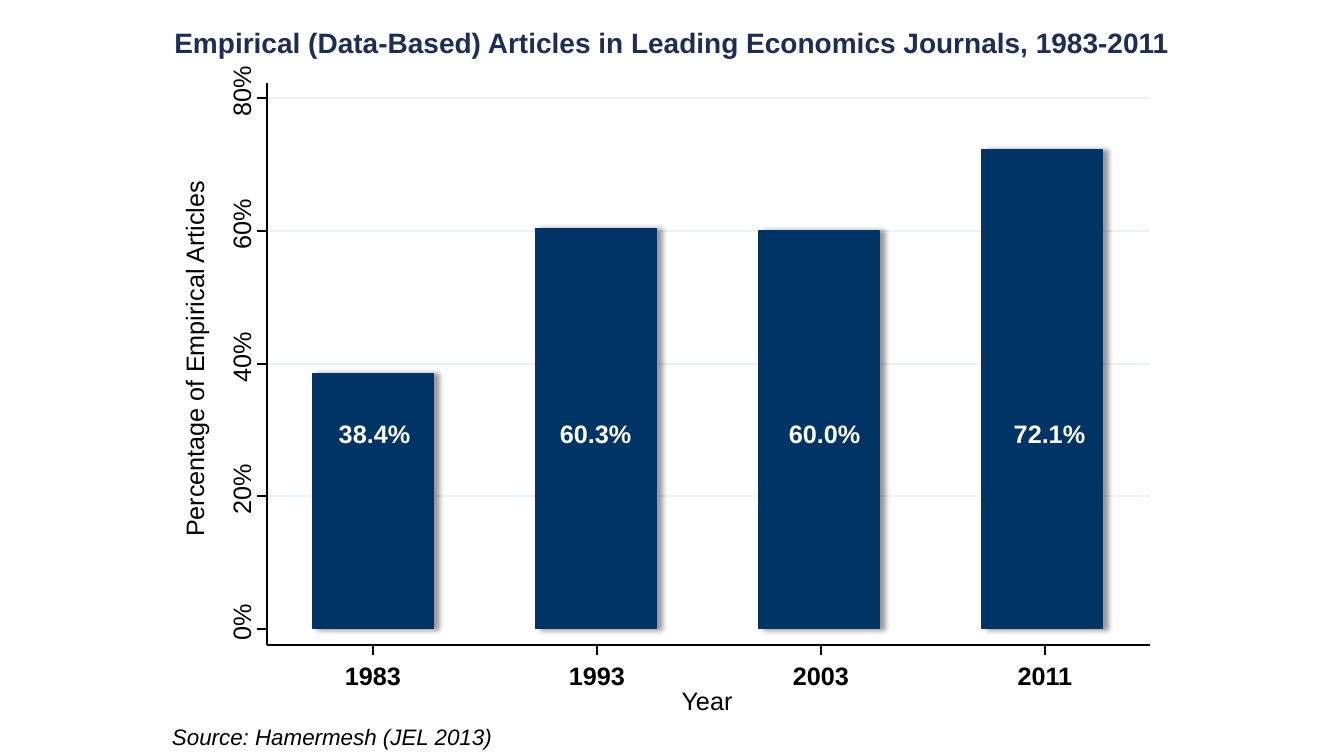
from lxml import etree
from pptx import Presentation
from pptx.dml.color import RGBColor
from pptx.enum.shapes import MSO_CONNECTOR, MSO_SHAPE
from pptx.enum.text import PP_ALIGN
from pptx.oxml import parse_xml
from pptx.oxml.ns import qn
from pptx.util import Emu, Pt

PX = 914400 / 100.8
RECTANGLE = MSO_SHAPE.RECTANGLE
STRAIGHT = MSO_CONNECTOR.STRAIGHT
LEFT, CENTER = PP_ALIGN.LEFT, PP_ALIGN.CENTER
color = RGBColor.from_string

AXIS_LEFT, AXIS_RIGHT, AXIS_TOP, AXIS_BOTTOM = 267, 1150, 83, 645
ZERO, TOP_TICK, TOP_PERCENT = 629, 98, 80
TICK = 10
BAR_WIDTH = 121
SHADOW = (
    '<a:outerShdw xmlns:a="http://schemas.openxmlformats.org/drawingml/2006/main" '
    'blurRad="50800" dist="38100" dir="0" algn="l" rotWithShape="0">'
    '<a:srgbClr val="000000"><a:alpha val="40000"/></a:srgbClr></a:outerShdw>'
)
articles = [
    ("1983", 38.4, 320),
    ("1993", 60.3, 541),
    ("2003", 60.0, 770),
    ("2011", 72.1, 995),
]

deck = Presentation()
deck.slide_width, deck.slide_height = Emu(round(1344 * PX)), Emu(round(756 * PX))
page = deck.slides.add_slide(deck.slide_layouts[6])


def add_text(text, *, at, size=18, fill="000000", bold=False, italic=False,
             align=CENTER, rotation=0, wrap=False):
    box = page.shapes.add_textbox(*[Emu(round(length * PX)) for length in at])
    box.rotation = rotation
    frame = box.text_frame
    frame.word_wrap = wrap
    frame.margin_left = frame.margin_right = frame.margin_top = frame.margin_bottom = 0
    para = frame.paragraphs[0]
    para.alignment = align
    span = para.add_run()
    span.text = text
    span.font.name = "Arial"
    span.font.size = Pt(size)
    span.font.bold = bold
    span.font.italic = italic
    span.font.color.rgb = color(fill)


def add_line(*ends, stroke="000000", width=0.88):
    line = page.shapes.add_connector(STRAIGHT, *[Emu(round(end * PX)) for end in ends])
    line.line.color.rgb = color(stroke)
    line.line.width = Pt(width)
    etree.SubElement(line._element.spPr, qn("a:effectLst"))


percent_ticks = [
    (percent, round(ZERO - percent * (ZERO - TOP_TICK) / TOP_PERCENT))
    for percent in range(0, TOP_PERCENT + 1, 20)
]
for percent, y in percent_ticks[1:]:
    add_line(AXIS_LEFT, y, AXIS_RIGHT, y, stroke="EAF2F3", width=1.75)

for index, (year, percent, label_left) in enumerate(articles):
    height = round(percent * (ZERO - TOP_TICK) / TOP_PERCENT)
    bounds = (313 + 223 * index, ZERO - height, BAR_WIDTH, height)
    bar = page.shapes.add_shape(RECTANGLE, *[Emu(round(length * PX)) for length in bounds])
    bar.fill.solid()
    bar.fill.fore_color.rgb = color("003366")
    bar.line.color.rgb = color("003366")
    bar.line.width = Pt(0)
    bar.shadow.inherit = False
    bar._element.spPr.find(qn("a:effectLst")).append(parse_xml(SHADOW))
    add_text(f"{percent:.1f}%", at=(label_left, 418, 109, 30), fill="FFFFFF", bold=True)
    tick_x = 373 + 224 * index
    add_line(tick_x, AXIS_BOTTOM, tick_x, AXIS_BOTTOM + TICK)
    add_text(year, at=(tick_x - 40, 660, 80, 30), bold=True)

add_line(AXIS_LEFT, AXIS_BOTTOM, AXIS_LEFT, AXIS_TOP)
add_line(AXIS_LEFT, AXIS_BOTTOM, AXIS_RIGHT, AXIS_BOTTOM)
for percent, y in percent_ticks:
    add_line(AXIS_LEFT, y, AXIS_LEFT - TICK, y)
    add_text(f"{percent}%", at=(206, y - 22, 70, 30), rotation=270)

add_text("Year", at=(667, 685, 80, 30))
add_text("Percentage of Empirical Articles", at=(4, 344, 380, 30), rotation=270)
add_text("Empirical (Data-Based) Articles in Leading Economics Journals, 1983-2011",
         at=(168, 25, 1008, 34), size=20, fill="1E2D53", bold=True, wrap=True)
add_text("Source: Hamermesh (JEL 2013)", at=(172, 723, 340, 27), size=16,
         italic=True, align=LEFT)

deck.save("out.pptx")
